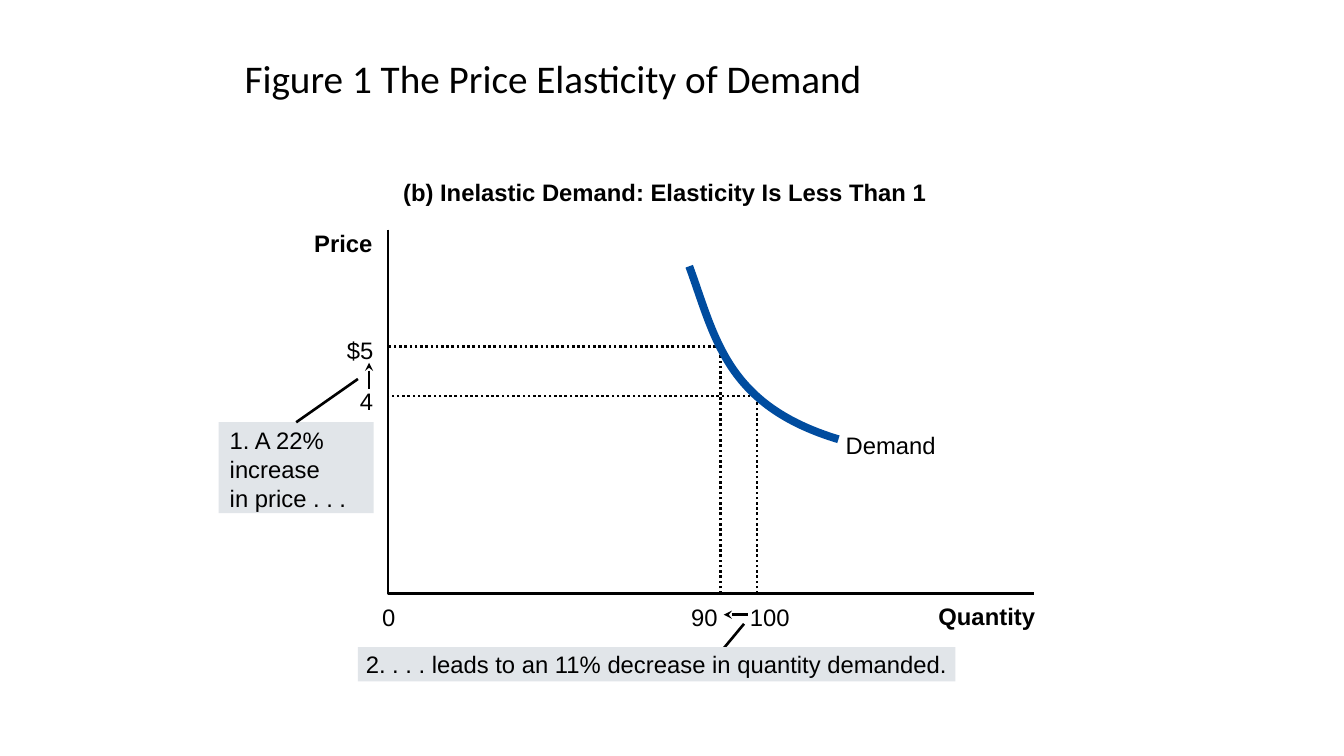
from lxml.etree import SubElement
from pptx import Presentation
from pptx.dml.color import RGBColor
from pptx.enum.dml import MSO_LINE as Dash
from pptx.enum.shapes import MSO_CONNECTOR as Link, MSO_SHAPE as Form
from pptx.enum.text import MSO_ANCHOR as Anchor, MSO_AUTO_SIZE as Fit, PP_ALIGN as Align
from pptx.oxml.ns import qn
from pptx.util import Cm, Pt

BLACK, BLUE, GREY = "000000", "004C9F", "E1E5E9"
THIN, THICK = 1.88, 5.63
LEFT, BASE = 9.78, 14.96
TICK = 15.19
LINE = 0.73


def paint(target, color):
    target.solid()
    target.fore_color.rgb = RGBColor.from_string(color)


def style(font, size, name, bold=False):
    font.size, font.name, font.bold = Pt(size), name, bold
    paint(font.fill, BLACK)


def title(slide, text):
    head = slide.shapes.title
    head.left, head.top, head.width, head.height = Cm(5.91), Cm(1.17), Cm(22.45), Cm(1.78)
    frame = head.text_frame
    frame.text = text
    frame.auto_size = Fit.NONE
    frame.vertical_anchor = Anchor.MIDDLE
    para = frame.paragraphs[0]
    para.alignment = Align.LEFT
    para.line_spacing = 0.8
    style(para.font, 28, "Calibri")


def label(slide, text, x, y, width, bold=False):
    frame = slide.shapes.add_textbox(Cm(x), Cm(y), Cm(width), Cm(LINE)).text_frame
    frame.margin_left = frame.margin_top = frame.margin_right = frame.margin_bottom = 0
    frame.word_wrap = False
    frame.auto_size = Fit.SHAPE_TO_FIT_TEXT
    frame.text = text
    style(frame.paragraphs[0].font, 17, "Arial", bold)


def trace(slide, points, color=BLACK, width=THIN, dash=None):
    start, *rest = [(Cm(x), Cm(y)) for x, y in points]
    pen = slide.shapes.build_freeform(*start)
    pen.add_line_segments(rest, close=False)
    shape = pen.convert_to_shape()
    shape.shadow.inherit = False
    shape.fill.background()
    paint(shape.line.fill, color)
    shape.line.width = Pt(width)
    if dash:
        shape.line.dash_style = dash
    return shape


def bend(shape):
    steps = list(shape._element.iter(qn("a:lnTo")))
    curve = SubElement(steps[0].getparent(), qn("a:cubicBezTo"))
    for step in steps:
        curve.append(step[0])
        step.getparent().remove(step)


def line(slide, x1, y1, x2, y2, arrow=False):
    link = slide.shapes.add_connector(Link.STRAIGHT, Cm(x1), Cm(y1), Cm(x2), Cm(y2))
    paint(link.line.fill, BLACK)
    link.line.width = Pt(THIN)
    if arrow:
        SubElement(link.line._get_or_add_ln(), qn("a:headEnd"), type="stealth")
    SubElement(link._element.spPr, qn("a:effectLst"))
    return link


def panel(slide, x, y, width, height):
    box = slide.shapes.add_shape(Form.RECTANGLE, Cm(x), Cm(y), Cm(width), Cm(height))
    box.shadow.inherit = False
    paint(box.fill, GREY)
    box.line.fill.background()
    return box


def main():
    deck = Presentation()
    deck.slide_width, deck.slide_height = Cm(33.87), Cm(19.05)
    slide = deck.slides.add_slide(deck.slide_layouts[5])

    title(slide, "Figure 1 The Price Elasticity of Demand")
    label(slide, "(b) Inelastic Demand: Elasticity Is Less Than 1", 10.16, 4.47, 13.34, True)

    trace(slide, [(LEFT, 5.79), (LEFT, BASE), (26.06, BASE)])
    label(slide, "Price", 7.92, 5.77, 1.5, True)
    label(slide, "Quantity", 23.65, 15.16, 2.46, True)
    label(slide, "0", 9.63, TICK, 0.33)

    for x, y in [(18.16, 8.74), (19.08, 9.98)]:
        trace(slide, [(x, BASE), (x, y), (LEFT, y)], dash=Dash.ROUND_DOT)
    label(slide, "$5", 8.74, 8.46, 0.69)
    label(slide, "4", 9.07, 9.75, 0.33)
    label(slide, "90", 17.42, TICK, 0.69)
    label(slide, "100", 18.9, TICK, 1.02)
    line(slide, 9.3, 9.14, 9.3, 9.8, arrow=True)
    line(slide, 18.24, 15.49, 18.85, 15.49, arrow=True)

    bend(trace(slide, [(17.37, 6.71), (18.03, 8.51), (18.29, 10.21), (21.13, 11.07)], BLUE, THICK))
    label(slide, "Demand", 21.31, 10.85, 2.29)

    cause = panel(slide, 5.51, 10.64, 3.91, 2.29)
    line(slide, 7.47, 10.64, 9.02, 9.55).begin_connect(cause, 0)
    for row, text in enumerate(["1. A 22%", "increase", "in price . . ."]):
        label(slide, text, 5.79, 10.72 + row * LINE, 2.97)

    line(slide, 18.75, 15.72, 18.16, 16.43)
    panel(slide, 9.02, 16.31, 15.06, 0.86)
    label(slide, "2. . . . leads to an 11% decrease in quantity demanded.", 9.22, 16.38, 14.83)

    deck.save("out.pptx")


if __name__ == "__main__":
    main()
